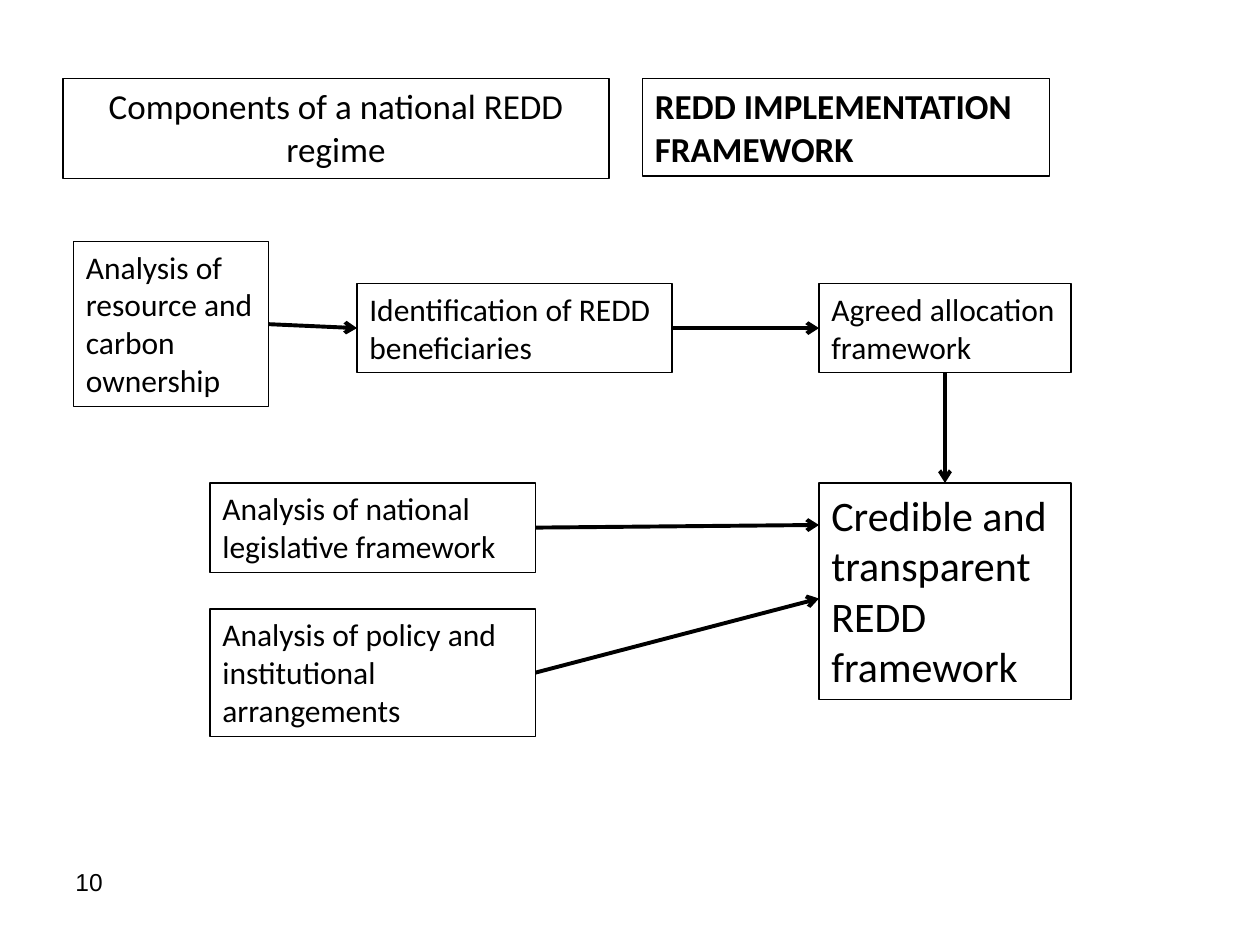
from dataclasses import dataclass
from typing import Optional

from lxml.etree import SubElement
from pptx import Presentation
from pptx.dml.color import RGBColor
from pptx.enum.shapes import MSO_CONNECTOR, MSO_SHAPE
from pptx.enum.text import MSO_ANCHOR, MSO_AUTO_SIZE, PP_ALIGN
from pptx.oxml.ns import qn
from pptx.shapes.autoshape import Shape
from pptx.slide import Slide
from pptx.util import Pt

TOP, LEFT, BOTTOM, RIGHT = range(4)


@dataclass(frozen=True)
class Theme:
    ink: RGBColor = RGBColor(0, 0, 0)
    font: str = "Calibri"
    number_font: str = "Arial"
    heading: float = 20
    step: float = 18
    outcome: float = 24
    number: float = 14
    border: float = 0.75
    arrow: float = 2.25


@dataclass(frozen=True)
class Box:
    text: str
    left: float
    top: float
    width: float
    height: float
    size: float
    bold: bool = False
    align: PP_ALIGN = PP_ALIGN.LEFT


@dataclass(frozen=True)
class Arrow:
    source: str
    source_side: int
    target: str
    target_side: int
    target_y: Optional[float] = None


THEME = Theme()
OUTCOME_LEFT, OUTCOME_WIDTH = 468, 144
ANALYSIS_LEFT, ANALYSIS_WIDTH = 120, 186
STEP_TOP, ANALYSIS_TOP, TWO_LINES = 162, 276, 51

BOXES = {
    "title": Box("Components of a national REDD regime", 36, 45, 312, 57,
                 THEME.heading, align=PP_ALIGN.CENTER),
    "framework": Box("REDD IMPLEMENTATION FRAMEWORK", 367.2, 45, 232.6, 55.6,
                     THEME.heading, bold=True),
    "ownership": Box("Analysis of resource and carbon ownership",
                     42, 138, 111.6, 94.5, THEME.step),
    "beneficiaries": Box("Identification of REDD beneficiaries",
                         204, STEP_TOP, 180, TWO_LINES, THEME.step),
    "allocation": Box("Agreed allocation framework", OUTCOME_LEFT, STEP_TOP,
                      OUTCOME_WIDTH, TWO_LINES, THEME.step),
    "legislation": Box("Analysis of national legislative framework", ANALYSIS_LEFT,
                       ANALYSIS_TOP, ANALYSIS_WIDTH, TWO_LINES, THEME.step),
    "policy": Box("Analysis of policy and institutional arrangements", ANALYSIS_LEFT,
                  ANALYSIS_TOP + 72, ANALYSIS_WIDTH, 72.7, THEME.step),
    "outcome": Box("Credible and transparent REDD framework", OUTCOME_LEFT,
                   ANALYSIS_TOP, OUTCOME_WIDTH, 123.8, THEME.outcome),
}

ARROWS = [
    Arrow("ownership", RIGHT, "beneficiaries", LEFT),
    Arrow("beneficiaries", RIGHT, "allocation", LEFT),
    Arrow("allocation", BOTTOM, "outcome", TOP),
    Arrow("legislation", RIGHT, "outcome", LEFT, target_y=300),
    Arrow("policy", RIGHT, "outcome", LEFT, target_y=342),
]


def draw_box(slide: Slide, box: Box) -> Shape:
    rectangle = slide.shapes.add_shape(
        MSO_SHAPE.RECTANGLE, Pt(box.left), Pt(box.top), Pt(box.width), Pt(box.height))
    rectangle.shadow.inherit = False
    rectangle.fill.background()
    rectangle.line.color.rgb = THEME.ink
    rectangle.line.width = Pt(THEME.border)
    frame = rectangle.text_frame
    frame.word_wrap = True
    frame.auto_size = MSO_AUTO_SIZE.SHAPE_TO_FIT_TEXT
    frame.vertical_anchor = MSO_ANCHOR.TOP
    write(frame.paragraphs[0], box.text, THEME.font, box.size, box.bold, box.align)
    return rectangle


def write(paragraph, text: str, font: str, size: float,
          bold: bool = False, align: PP_ALIGN = PP_ALIGN.LEFT) -> None:
    paragraph.text = text
    paragraph.alignment = align
    paragraph.font.name = font
    paragraph.font.size = Pt(size)
    paragraph.font.bold = bold
    paragraph.font.color.rgb = THEME.ink


def draw_arrow(slide: Slide, arrow: Arrow, drawn: dict[str, Shape]) -> None:
    target = BOXES[arrow.target]
    connector = slide.shapes.add_connector(
        MSO_CONNECTOR.STRAIGHT, Pt(0), Pt(0), Pt(target.left), Pt(arrow.target_y or 0))
    connector.begin_connect(drawn[arrow.source], arrow.source_side)
    if arrow.target_y is None:
        connector.end_connect(drawn[arrow.target], arrow.target_side)
    connector.line.color.rgb = THEME.ink
    connector.line.width = Pt(THEME.arrow)
    SubElement(connector.line._get_or_add_ln(), qn("a:tailEnd"), type="arrow")
    SubElement(connector._element.spPr, qn("a:effectLst"))


def draw_page_number(slide: Slide, number: str) -> None:
    footer = slide.shapes.add_textbox(Pt(36), Pt(492), Pt(168), Pt(37.5))
    footer.text_frame.word_wrap = True
    write(footer.text_frame.paragraphs[0], number, THEME.number_font, THEME.number)


def main() -> None:
    presentation = Presentation()
    presentation.slide_width, presentation.slide_height = Pt(720), Pt(540)
    slide = presentation.slides.add_slide(presentation.slide_layouts[6])
    draw_page_number(slide, "10")
    drawn = {name: draw_box(slide, box) for name, box in BOXES.items()}
    for arrow in ARROWS:
        draw_arrow(slide, arrow, drawn)
    presentation.save("out.pptx")


if __name__ == "__main__":
    main()
